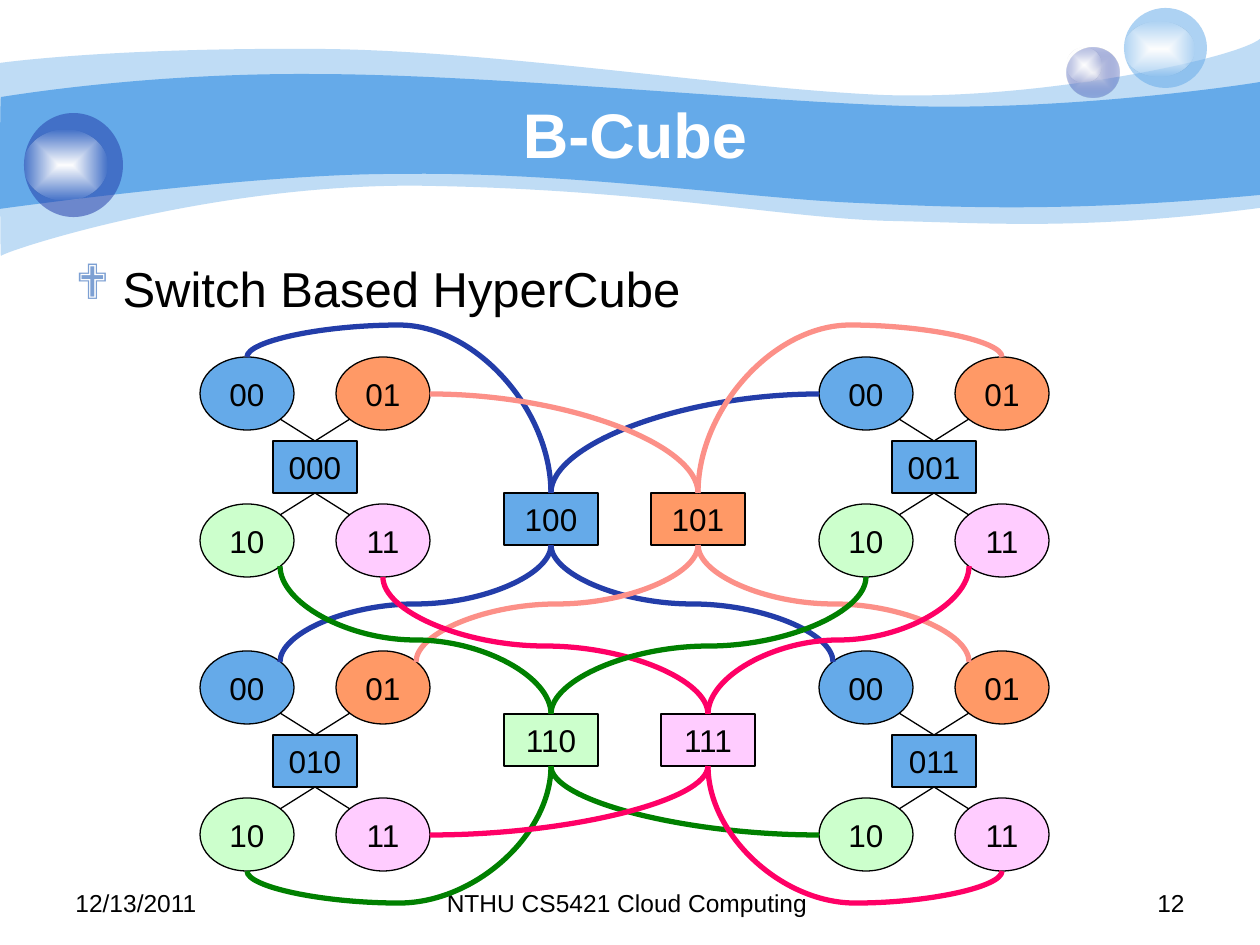
from lxml import etree
from pptx import Presentation
from pptx.dml.color import RGBColor
from pptx.enum import shapes, text
from pptx.oxml import parse_xml
from pptx.oxml.ns import nsdecls, qn
from pptx.util import Emu, Pt

SCALE = 914400 / 126  # EMU per px

BLACK = RGBColor(0x00, 0x00, 0x00)
WHITE = RGBColor(0xFF, 0xFF, 0xFF)
SKY = RGBColor(0x65, 0xAA, 0xE9)
NAVY = RGBColor(0x23, 0x3D, 0xA9)
MIST = RGBColor(0xE1, 0xE2, 0xED)
ORANGE = RGBColor(0xFF, 0x99, 0x66)
MINT = RGBColor(0xCC, 0xFF, 0xCC)
PINK = RGBColor(0xFF, 0xCC, 0xFF)
SALMON = RGBColor(0xFC, 0x90, 0x88)
GREEN = RGBColor(0x00, 0x80, 0x00)
ROSE = RGBColor(0xFF, 0x00, 0x66)
BULLET = RGBColor(0x7D, 0xA0, 0xD3)

# Banner waves: colour, opacity %, start, then cubic (6 numbers) or straight (2) steps
WAVES = [
    (SKY, 41, (0, 63), [
        (30, 59, 135, 48, 311, 49), (486, 49, 725, 88, 881, 95),
        (1036, 101, 1235, 59, 1260, 39), (1260, 208),
        (1081, 231, 992, 223, 888, 221), (784, 218, 649, 190, 432, 186),
        (217, 181, 5, 251, 1, 256), (0, 262, 0, 95, 0, 63)]),
    (SKY, 100, (1, 97), [
        (3, 97, 139, 73, 312, 74), (486, 74, 750, 101, 905, 106),
        (1060, 111, 1230, 87, 1260, 82), (1260, 195),
        (1075, 212, 964, 208, 859, 203), (755, 199, 563, 171, 399, 174),
        (256, 173, -1, 209, -1, 209), (0, 209, 0, 97, 1, 97)]),
]
# Bubbles: ball box, centre colour, rim colour, centre and rim opacity %, highlight box
BUBBLES = [
    ((1067, 48, 53, 50), MIST, NAVY, 100, 31, (1067, 48, 35, 34)),
    ((1124, 8, 83, 80), SKY, SKY, 53, 53, (1124, 22, 70, 54)),
    ((24, 113, 99, 104), NAVY, NAVY, 53, 53, (24, 130, 83, 70)),
]
FOOTERS = [
    ((63, 882, 294, 44), "12/13/2011", text.PP_ALIGN.LEFT),
    ((431, 882, 399, 44), "NTHU CS5421 Cloud Computing ", text.PP_ALIGN.CENTER),
    ((903, 882, 294, 44), "12", text.PP_ALIGN.RIGHT),
]
CLUSTERS = {"000": (200, 357), "001": (819, 357), "011": (819, 651), "010": (200, 651)}
NODES = {"00": (0, 0, SKY), "01": (136, 0, ORANGE),
         "10": (0, 147, MINT), "11": (136, 147, PINK)}
NODE_SIZE = (94, 73)
HUB = (73, 84, 84, 52)
SWITCHES = {"100": (504, 493, SKY), "101": (651, 493, ORANGE),
            "110": (504, 714, MINT), "111": (661, 714, PINK)}
SWITCH_SIZE = (94, 52)
# Points on a node's edge, from its top left corner
PORTS = {"top": (47, 0), "bottom": (47, 73), "left": (0, 37), "right": (94, 37),
         "nw": (14, 11), "ne": (80, 11), "sw": (14, 62), "se": (80, 62)}
# Cluster, node, port, switch, switch side, height of the bend (None: a quarter turn)
LINKS = [
    ("000", "00", "top", "100", "top", 325, NAVY),
    ("001", "00", "left", "100", "top", None, NAVY),
    ("011", "00", "nw", "100", "bottom", 604, NAVY),
    ("010", "00", "ne", "100", "bottom", 604, NAVY),
    ("001", "01", "top", "101", "top", 325, SALMON),
    ("000", "01", "right", "101", "top", None, SALMON),
    ("011", "01", "nw", "101", "bottom", 604, SALMON),
    ("010", "01", "ne", "101", "bottom", 604, SALMON),
    ("000", "10", "se", "110", "top", 640, GREEN),
    ("010", "10", "bottom", "110", "bottom", 903, GREEN),
    ("011", "10", "left", "110", "bottom", None, GREEN),
    ("000", "11", "bottom", "111", "top", 646, ROSE),
    ("010", "11", "right", "111", "bottom", None, ROSE),
    ("011", "11", "bottom", "111", "bottom", 903, ROSE),
    ("001", "11", "sw", "111", "top", 640, ROSE),
    ("001", "10", "bottom", "110", "top", 646, GREEN),
]


def px(*values):
    return [Emu(round(v * SCALE)) for v in values]


def write(box, words, size=18, color=BLACK, bold=False, align=text.PP_ALIGN.CENTER,
          anchor=text.MSO_ANCHOR.MIDDLE, wrap=True):
    frame = box.text_frame
    frame.word_wrap, frame.vertical_anchor = wrap, anchor
    para = frame.paragraphs[0]
    para.alignment = align
    span = para.add_run()
    span.text = words
    font = span.font
    font.name, font.size, font.bold, font.color.rgb = "Arial", Pt(size), bold, color
    return para


def add_label_shape(parent, kind, area, color, words):
    shape = parent.add_shape(kind, *px(*area))
    shape.shadow.inherit = False
    shape.fill.solid()
    shape.fill.fore_color.rgb = color
    shape.line.color.rgb, shape.line.width = BLACK, Pt(0.75)
    write(shape, words, wrap=False)


def fill_radial(shape, stops):
    """Fill from the centre outwards; stops are (colour, opacity %)."""
    shape.shadow.inherit = False
    shape.line.fill.background()
    marks = "".join(
        f'<a:gs pos="{i * 100000}"><a:srgbClr val="{color}">'
        f'<a:alpha val="{alpha * 1000}"/></a:srgbClr></a:gs>'
        for i, (color, alpha) in enumerate(stops))
    fill = parse_xml(
        f'<a:gradFill {nsdecls("a")} rotWithShape="1"><a:gsLst>{marks}</a:gsLst>'
        '<a:path path="shape"><a:fillToRect l="50000" t="50000" r="50000" b="50000"/>'
        '</a:path></a:gradFill>')
    shape._element.spPr.find(qn("a:prstGeom")).addnext(fill)


def fill_clear(shape, color, alpha):
    shape.shadow.inherit = False
    shape.line.fill.background()
    shape.fill.solid()
    shape.fill.fore_color.rgb = color
    if alpha < 100:
        mark = shape._element.spPr.find(".//" + qn("a:srgbClr"))
        etree.SubElement(mark, qn("a:alpha")).set("val", str(alpha * 1000))


def add_wave(parent, start, steps):
    """Draw a closed outline, then bend its sides into cubic curves."""
    ends = [step[-2:] for step in steps]
    builder = parent.build_freeform(*start, scale=SCALE)
    builder.add_line_segments(ends, close=True)
    wave = builder.convert_to_shape()
    left, top = (min(axis) for axis in zip(start, *ends))
    sides = wave._element.spPr.findall(".//" + qn("a:lnTo"))
    for side, step in zip(sides, steps):
        if len(step) == 6:
            bend = etree.Element(qn("a:cubicBezTo"))
            for x, y in zip(step[::2], step[1::2]):
                etree.SubElement(bend, qn("a:pt"), x=str(x - left), y=str(y - top))
            side.getparent().replace(side, bend)
    return wave


def add_line(parent, start, end, color=BLACK, width=0.75,
             kind=shapes.MSO_CONNECTOR.STRAIGHT):
    line = parent.add_connector(kind, *px(*start, *end))
    line.line.color.rgb, line.line.width = color, Pt(width)
    etree.SubElement(line._element.spPr, qn("a:effectLst"))
    return line


def add_curve(parent, node, switch, bend, color):
    start, end = (node, switch) if bend is None else sorted([node, switch], key=lambda p: p[1])
    curve = add_line(parent, start, end, color, 3, shapes.MSO_CONNECTOR.CURVE)
    geometry = curve._element.spPr.find(qn("a:prstGeom"))
    if bend is None:
        geometry.set("prst", "curvedConnector2")
        return
    # A curve that leaves vertically is a level one, turned about its centre
    (x1, y1), (x2, y2) = start, end
    wide, high = y2 - y1, abs(x2 - x1)
    curve.left, curve.top, curve.width, curve.height = px(
        (x1 + x2 - wide) / 2, (y1 + y2 - high) / 2, wide, high)
    frame = curve._element.spPr.find(qn("a:xfrm"))
    frame.set("rot", str((270 if x2 > x1 else 90) * 60000))
    frame.set("flipH", "1" if x2 > x1 else "0")
    guide = etree.SubElement(geometry.get_or_add_avLst(), qn("a:gd"))
    guide.set("name", "adj1")
    guide.set("fmla", f"val {round((bend - y1) / wide * 100000)}")


deck = Presentation()
deck.slide_width, deck.slide_height = px(1260, 945)
page = deck.slides.add_slide(deck.slide_layouts[5])
OVAL, RECT = shapes.MSO_SHAPE.OVAL, shapes.MSO_SHAPE.RECTANGLE

# Banner
for color, alpha, start, steps in WAVES:
    fill_clear(add_wave(page.shapes, start, steps), color, alpha)
for ball, core, rim, core_alpha, rim_alpha, shine in BUBBLES:
    group = page.shapes.add_group_shape().shapes
    disc = group.add_shape(OVAL, *px(*ball))
    if core == rim:
        fill_clear(disc, core, core_alpha)
    else:
        fill_radial(disc, [(core, core_alpha), (rim, rim_alpha)])
    fill_radial(group.add_shape(OVAL, *px(*shine)), [(WHITE, 100), (WHITE, 0)])

# Title, brought in front of the banner
title = page.shapes.title
title.left, title.top, title.width, title.height = px(126, 94, 1018, 78)
write(title, "B-Cube", size=36, color=WHITE, bold=True)
page.shapes._spTree.append(title._element)

# Bullet and footers
body = page.shapes.add_textbox(*px(63, 252, 1134, 84))
para = write(body, "Switch Based HyperCube", size=28, align=text.PP_ALIGN.LEFT,
             anchor=text.MSO_ANCHOR.TOP)
para.space_before = Pt(5.6)
props = para._p.get_or_add_pPr()
props.set("marL", "342900")
props.set("indent", "-342900")
for tag in (f'<a:buClr {nsdecls("a")}><a:srgbClr val="{BULLET}"/></a:buClr>',
            f'<a:buFont {nsdecls("a")} typeface="Wingdings" charset="2"/>',
            f'<a:buChar {nsdecls("a")} char="❖"/>'):
    props.append(parse_xml(tag))
for area, words, align in FOOTERS:
    write(page.shapes.add_textbox(*px(*area)), words, size=14, align=align,
          anchor=text.MSO_ANCHOR.TOP)

# Clusters: four nodes around a hub
for name, (x, y) in CLUSTERS.items():
    group = page.shapes.add_group_shape().shapes
    for label, (dx, dy, color) in NODES.items():
        add_label_shape(group, OVAL, (x + dx, y + dy, *NODE_SIZE), color, label)
    hub_x, hub_y, hub_w, hub_h = HUB
    add_label_shape(group, RECT, (x + hub_x, y + hub_y, hub_w, hub_h), SKY, name)
    for (dx, dy, _), port in zip(NODES.values(), ("se", "sw", "ne", "nw")):
        hub_edge = (x + hub_x + hub_w / 2, y + hub_y + (hub_h if dy else 0))
        add_line(group, hub_edge, (x + dx + PORTS[port][0], y + dy + PORTS[port][1]))

# Switches and their links
for label, (x, y, color) in SWITCHES.items():
    add_label_shape(page.shapes, RECT, (x, y, *SWITCH_SIZE), color, label)
for cluster, label, port, switch, side, bend, color in LINKS:
    node = [sum(parts) for parts in zip(CLUSTERS[cluster], NODES[label], PORTS[port])]
    x, y, _ = SWITCHES[switch]
    edge = (x + SWITCH_SIZE[0] / 2, y + (SWITCH_SIZE[1] if side == "bottom" else 0))
    add_curve(page.shapes, node, edge, bend, color)

deck.save("out.pptx")
